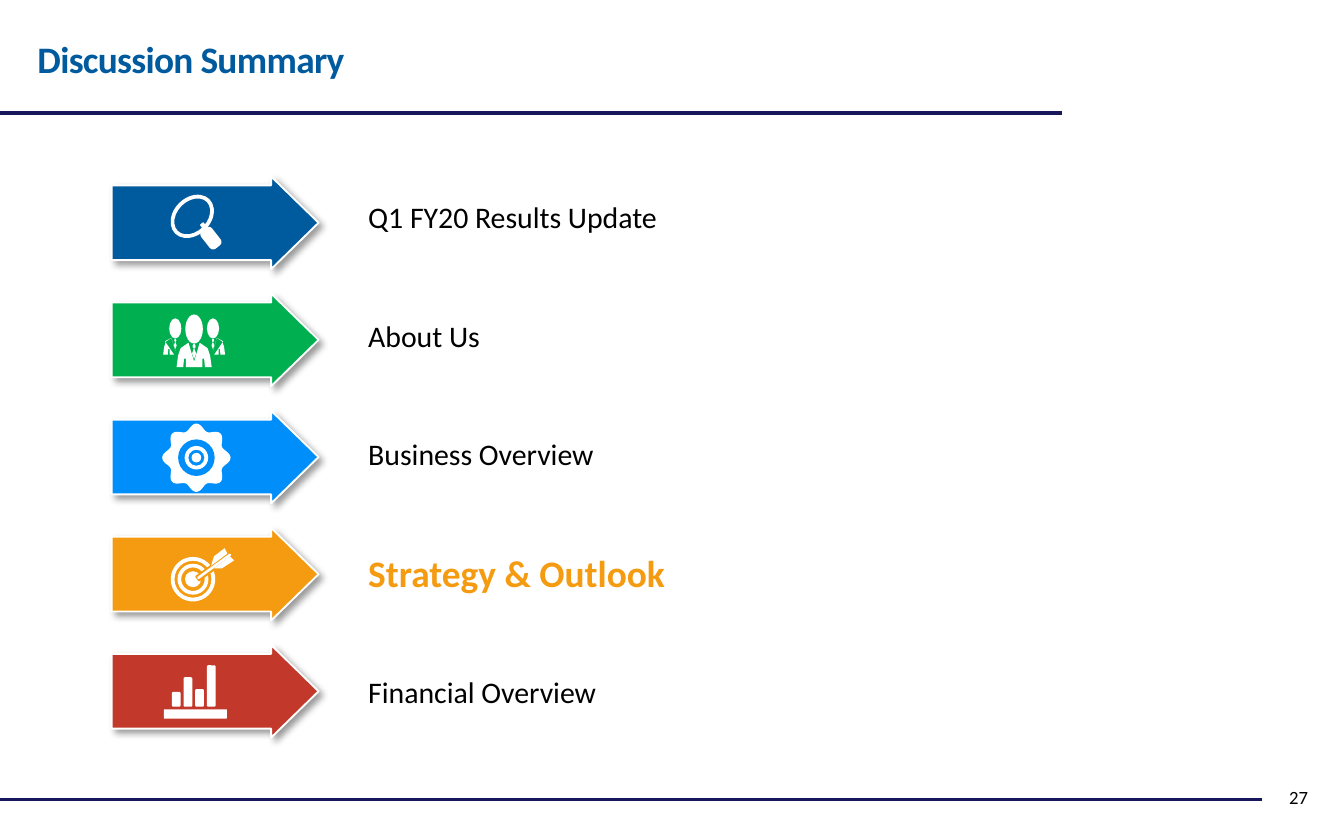
from math import cos, pi, sin

from lxml import etree
from pptx import Presentation
from pptx.dml.color import RGBColor
from pptx.enum.shapes import MSO_CONNECTOR, MSO_SHAPE
from pptx.enum.text import MSO_ANCHOR, PP_ALIGN
from pptx.oxml.ns import qn
from pptx.util import Pt

NAVY = RGBColor(0x17, 0x17, 0x5C)
BLUE = RGBColor(0x00, 0x5A, 0x9E)
GREEN = RGBColor(0x00, 0xB0, 0x50)
SKY = RGBColor(0x00, 0x8F, 0xFA)
AMBER = RGBColor(0xF5, 0x9B, 0x11)
RED = RGBColor(0xC2, 0x38, 0x2B)
WHITE = RGBColor(0xFF, 0xFF, 0xFF)
BLACK = RGBColor(0x00, 0x00, 0x00)

ARROW = MSO_SHAPE.RIGHT_ARROW
ROUND = MSO_SHAPE.ROUNDED_RECTANGLE
OVAL = MSO_SHAPE.OVAL
DONUT = MSO_SHAPE.DONUT
STRAIGHT = MSO_CONNECTOR.STRAIGHT
MIDDLE = MSO_ANCHOR.MIDDLE
TOP = MSO_ANCHOR.TOP
LEFT = PP_ALIGN.LEFT
RIGHT = PP_ALIGN.RIGHT

TOPICS = [
    ("Q1 FY20 Results Update", BLUE),
    ("About Us", GREEN),
    ("Business Overview", SKY),
    ("Strategy & Outlook", AMBER),
    ("Financial Overview", RED),
]
ACTIVE = 3
COAT = [(3, 15.1), (7.2, 18), (8.6, 22), (9.4, 28.1), (5.8, 28.1),
        (5.4, 23.6), (4.4, 23.6), (4.4, 28.1)]
CUT = [(1, 28.1), (8, 17.8), (3, 15.1)]
TIE = [(0, 18), (1.1, 20.9), (0, 23.8), (-1.1, 20.9)]


class Deck:
    """Hold the style and the current slide, and draw each kind of element."""

    font = "Calibri"

    def __init__(self, wide, high):
        self.file = Presentation()
        self.file.slide_width, self.file.slide_height = Pt(wide), Pt(high)
        self.slide = self.file.slides.add_slide(self.file.slide_layouts[6])
        self.shapes = self.slide.shapes

    def run(self, para, text, size, color, bold=False, track=0):
        run = para.add_run()
        run.text = text
        run.font.name, run.font.size, run.font.bold = self.font, Pt(size), bold
        run.font.color.rgb = color
        if track:
            run.font._element.set("spc", str(track))

    def text(self, x, y, w, h, text, size, color, align=LEFT, anchor=TOP, **look):
        frame = self.shapes.add_textbox(Pt(x), Pt(y), Pt(w), Pt(h)).text_frame
        frame.word_wrap, frame.vertical_anchor = True, anchor
        para = frame.paragraphs[0]
        para.alignment = align
        self.run(para, text, size, color, **look)

    def rule(self, y, end):
        line = self.shapes.add_connector(STRAIGHT, 0, Pt(y), Pt(end), Pt(y))
        line.line.color.rgb, line.line.width = NAVY, Pt(1.75)
        etree.SubElement(line._element.spPr, qn("a:effectLst"))

    def paint(self, shape, color):
        shape.shadow.inherit = False
        shape.fill.solid()
        shape.fill.fore_color.rgb = color
        shape.line.fill.background()
        return shape

    def shape(self, kind, x, y, w, h, color=WHITE, turn=0, adjust=()):
        item = self.shapes.add_shape(kind, Pt(x), Pt(y), Pt(w), Pt(h))
        item.rotation = turn
        for i, value in enumerate(adjust):
            item.adjustments[i] = value
        return self.paint(item, color)

    def disc(self, x, y, r, color=WHITE):
        self.shape(OVAL, x - r, y - r, 2 * r, 2 * r, color)

    def ring(self, x, y, a, b, thick, turn=0):
        self.shape(DONUT, x - a, y - b, 2 * a, 2 * b, WHITE, turn,
                   [thick / (2 * min(a, b))])

    def outline(self, points, color=WHITE):
        ends = [(Pt(x), Pt(y)) for x, y in points]
        form = self.shapes.build_freeform(*ends[0])
        form.add_line_segments(ends[1:], close=True)
        self.paint(form.convert_to_shape(), color)

    def arrow(self, x, y, w, h, color):
        item = self.shape(ARROW, x, y, w, h, color, adjust=[0.806, 0.512])
        item.line.color.rgb, item.line.width = WHITE, Pt(1)
        effect = item._element.spPr.find(qn("a:effectLst"))
        cast = etree.SubElement(effect, qn("a:outerShdw"), blurRad="50800",
                                dist="38100", dir="2700000", algn="tl", rotWithShape="0")
        tint = etree.SubElement(cast, qn("a:srgbClr"), val="000000")
        etree.SubElement(tint, qn("a:alpha"), val="40000")

    def table(self, x, y, w, row, topics, active):
        size = len(topics)
        grid = self.shapes.add_table(size, 1, Pt(x), Pt(y), Pt(w), Pt(row * size)).table
        grid.first_row = grid.horz_banding = False
        for i, (text, color) in enumerate(topics):
            cell = grid.cell(i, 0)
            cell.fill.solid()
            cell.fill.fore_color.rgb = WHITE
            cell.vertical_anchor = MIDDLE
            cell.margin_left = cell.margin_right = Pt(5.76)
            cell.margin_top = cell.margin_bottom = Pt(2.88)
            look = (20, color, True) if i == active else (16, BLACK)
            self.run(cell.text_frame.paragraphs[0], text, *look)

    def lens(self, x, y):
        self.ring(x, y, 13, 10, 2, -45)
        self.shape(ROUND, x + 4, y + 4.6, 5, 2.4, turn=52)
        self.shape(ROUND, x + 4, y + 8, 12, 7.4, turn=52, adjust=[0.3])

    def person(self, x, y, scale=1, side=0):
        flip = side or 1
        inner = CUT if side else [(-a, b) for a, b in COAT[::-1]]
        coat = [(0, 25.2)] + COAT + inner
        for part in (coat, TIE):
            self.outline([(x + flip * scale * a, y + scale * b) for a, b in part])
        self.shape(OVAL, x - 4.7 * scale, y, 9.4 * scale, 15.6 * scale)
        self.shape(OVAL, x - 0.8 * scale, y + 15.8 * scale, 1.6 * scale, 2.4 * scale)

    def team(self, x, y):
        for side in (-1, 1):
            self.person(x + side * 10.1, y + 2.1, 0.69, side)
        self.person(x, y)

    def gear(self, x, y):
        edge = []
        for i in range(160):
            turn = 2 * pi * i / 160
            r = 16.6 + 1.7 * cos(8 * turn)
            edge.append((x + r * cos(turn), y + r * sin(turn)))
        self.outline(edge)
        self.disc(x, y, 9.8, SKY)
        self.ring(x, y, 6.3, 6.3, 2)
        self.disc(x, y, 2.6)

    def target(self, x, y):
        for r in (11.9, 8.3):
            self.ring(x, y, r, r, 2)
        self.disc(x, y, 4.3)
        self.shape(ROUND, x, y - 8.4, 22, 3.6, AMBER, 324)
        self.outline([(x + 19.8, y - 12.2), (x + 22, y - 10),
                      (x + 15.5, y - 5.8), (x + 11.2, y - 5.8)])
        self.outline([(x + 16.9, y - 16.6), (x + 18.4, y - 13.7),
                      (x + 9.7, y - 7.2), (x + 11.2, y - 12.2)])
        self.shape(ROUND, x + 0.4, y - 7.6, 22, 1.4, turn=324, adjust=[0.5])

    def bars(self, x, y):
        self.shape(ROUND, x, y, 33.8, 5, adjust=[0.08])
        for i, high in enumerate((7.9, 15.8, 9.4, 22.2)):
            self.shape(ROUND, x + 4.3 + 6.25 * i, y - 1.4 - high, 4.7, high)


def main():
    deck = Deck(720, 450)
    deck.rule(428.4, 676)
    deck.rule(60.5, 568.8)
    deck.text(558, 411.8, 149.8, 30.2, "27", 10, BLACK, RIGHT, MIDDLE)
    deck.text(13, 15.8, 601, 31.7, "Discussion Summary", 20, BLUE, bold=True, track=-40)
    deck.table(191.5, 85, 211, 63.65, TOPICS, ACTIVE)
    for i, (_, color) in enumerate(TOPICS):
        deck.arrow(59.8, 94.5 + 62.75 * i, 110.9, 49.7, color)
    deck.lens(103, 115.9)
    deck.team(104, 168.5)
    deck.gear(105.2, 245.2)
    deck.target(103.4, 310.3)
    deck.bars(87.8, 380)
    deck.file.save("out.pptx")


if __name__ == "__main__":
    main()
